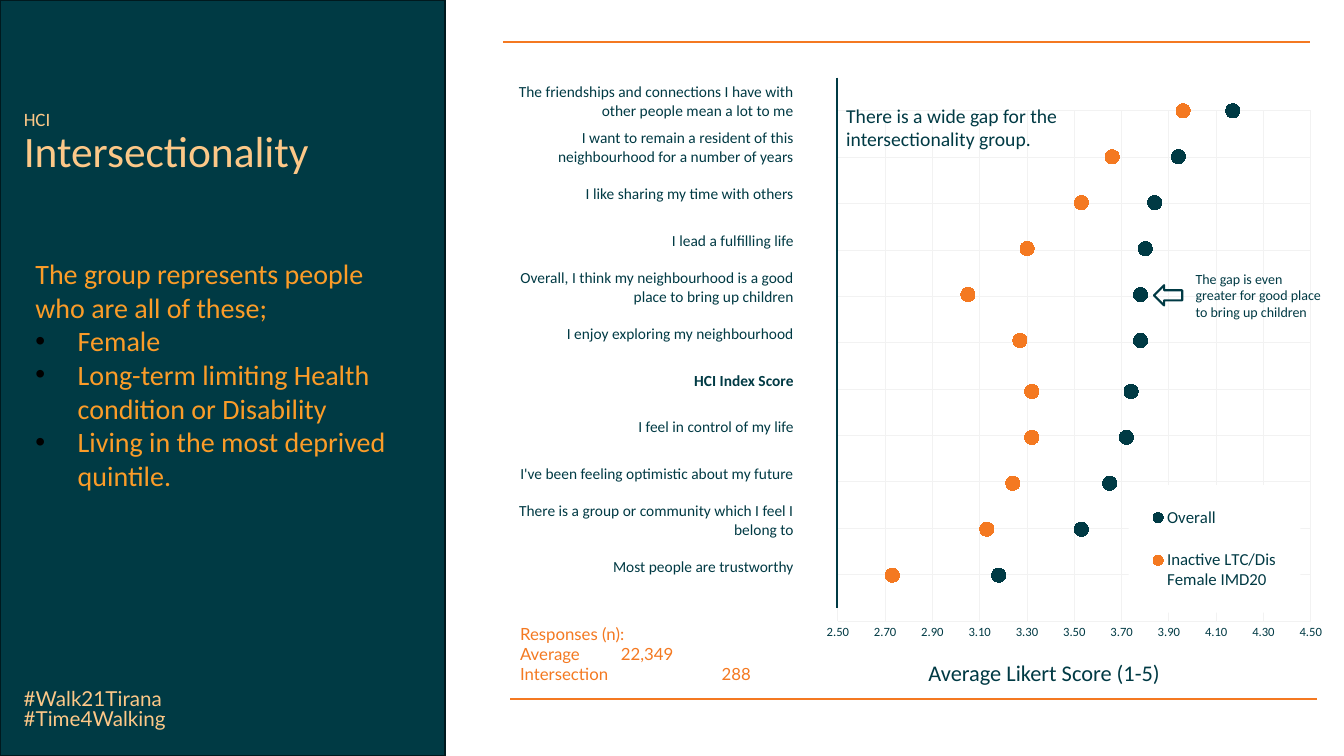
import lxml.etree
import pptx
import pptx.chart.data
import pptx.dml.color
import pptx.enum.chart
import pptx.enum.shapes
import pptx.enum.text
import pptx.oxml.ns
import pptx.util

# Content: statement, overall score, intersection score
SCORES = [
    ("The friendships and connections I have with other people mean a lot to me", 4.17, 3.96),
    ("I want to remain a resident of this neighbourhood for a number of years", 3.94, 3.66),
    ("I like sharing my time with others", 3.84, 3.53),
    ("I lead a fulfilling life", 3.80, 3.30),
    ("Overall, I think my neighbourhood is a good place to bring up children", 3.78, 3.05),
    ("I enjoy exploring my neighbourhood", 3.78, 3.27),
    ("HCI Index Score", 3.74, 3.32),
    ("I feel in control of my life", 3.72, 3.32),
    ("I've been feeling optimistic about my future", 3.65, 3.24),
    ("There is a group or community which I feel I belong to", 3.53, 3.13),
    ("Most people are trustworthy", 3.18, 2.73),
]
INDEX_ROW = "HCI Index Score"
SERIES = [("Overall", "dark"), ("Inactive LTC/Dis Female IMD20", "orange")]
GROUP_LEAD = "The group represents people who are all of these;"
GROUP = ["Female", "Long-term limiting Health condition or Disability",
         "Living in the most deprived quintile."]
# Each response line with its tab stop in inches
RESPONSES = [("Responses (n):", None), ("Average\t22,349", 1), ("Intersection\t288", 2)]
HASHTAGS = ["#Walk21Tirana", "#Time4Walking"]
WIDE_GAP = "There is a wide gap for the intersectionality group."
CHILD_GAP = "The gap is even greater for good place to bring up children"


class Theme:
    colors = dict(dark="003A44", edge="00191E", orange="F47921", amber="FB9C28",
                  peach="FDC888", grid="F2F2F2", white="FFFFFF", black="000000")
    sizes = dict(title=31, kicker=13.5, body=20, hashtag=14.7, caption=16,
                 note=14, legend=12, row=11, small=10, tick=9)
    font, alternate = "Calibri", "Lato"


# Places in percent of the slide: left, top, width, height
PLACES = dict(
    panel=(0, 0, 33.12, 100), title=(1.02, 10.27, 29.25, 17.47),
    body=(1.88, 33.27, 27.76, 50.8), hashtags=(0.79, 90.45, 13.95, 8),
    top_rule=(37.43, 5.6, 60.05, 0), bottom_rule=(37.96, 92.45, 60.05, 0),
    responses=(37.96, 81.87, 20.26, 9.47), chart=(58.81, 7.6, 40.59, 80.27),
    caption=(68.34, 86.53, 29.18, 4.93), table=(36.23, 10.27, 22.9, 67.8),
    spine=(62.27, 10.27, 0, 70.13), wide_gap=(62.22, 13.07, 20.93, 7.6),
    child_gap=(88.22, 35.07, 10.95, 10.27), arrow=(85.86, 37.73, 2.1, 2.67),
)
PLOT_SHARE = (0.087, 0.088, 0.867, 0.841)
LEGEND_SHARE = (0.62, 0.705, 0.315, 0.21)

qn = pptx.oxml.ns.qn
Inches, Pt = pptx.util.Inches, pptx.util.Pt
Align = pptx.enum.text.PP_ALIGN
deck = pptx.Presentation()
deck.slide_width, deck.slide_height = Inches(13.33), Inches(7.5)
page = deck.slides.add_slide(deck.slide_layouts[1])


def color(name):
    return pptx.dml.color.RGBColor.from_string(Theme.colors[name])


def place(name):
    sides = (deck.slide_width, deck.slide_height) * 2
    return [round(share * side / 100) for share, side in zip(PLACES[name], sides)]


def child(parent, tag, **attributes):
    return lxml.etree.SubElement(parent, qn(tag), **attributes)


def style(font, size, ink, face=Theme.font, bold=False):
    font.size, font.name, font.bold = Pt(Theme.sizes[size]), face, bold
    font.color.rgb = color(ink)


def write(para, text, size="row", ink="dark", face=Theme.font, bold=False,
          align=Align.LEFT, spacing=None, bullet=None, tab=None):
    """Add a formatted run to a paragraph."""
    properties = para._p.get_or_add_pPr()
    if bullet:
        properties.set("marL", str(Inches(0.42)))
        properties.set("indent", str(-Inches(0.42)))
        child(child(properties, "a:buClr"), "a:srgbClr", val=Theme.colors["black"])
        child(properties, "a:buFont", typeface="Arial")
        child(properties, "a:buChar", char=bullet)
    if tab:
        child(child(properties, "a:tabLst"), "a:tab", pos=str(Inches(tab)), algn="l")
    para.alignment = align
    if spacing:
        para.line_spacing = spacing
    span = para.add_run()
    span.text = text
    style(span.font, size, ink, face, bold)


def next_para(frame, index):
    return frame.paragraphs[0] if index == 0 else frame.add_paragraph()


def text_box(name, lines, margins=(0.1, 0.05), **look):
    frame = page.shapes.add_textbox(*place(name)).text_frame
    frame.word_wrap = True
    frame.margin_left = frame.margin_right = Inches(margins[0])
    frame.margin_top = frame.margin_bottom = Inches(margins[1])
    for index, (text, tab) in enumerate(lines):
        write(next_para(frame, index), text, tab=tab, **look)


def rule(name, ink, width):
    left, top, across, down = place(name)
    line = page.shapes.add_connector(pptx.enum.shapes.MSO_CONNECTOR.STRAIGHT,
                                     left, top, left + across, top + down)
    line.line.color.rgb, line.line.width = color(ink), Pt(width)
    child(line._element.spPr, "a:effectLst")


def outlined(kind, name, ink, fill=None):
    shape = page.shapes.add_shape(kind, *place(name))
    shape.shadow.inherit = False
    if fill:
        shape.fill.solid()
        shape.fill.fore_color.rgb = color(fill)
    else:
        shape.fill.background()
    shape.line.color.rgb, shape.line.width = color(ink), Pt(1.5)
    return shape


def manual_layout(shares, inner=False):
    layout = lxml.etree.Element(qn("c:layout"))
    manual = child(layout, "c:manualLayout")
    if inner:
        child(manual, "c:layoutTarget", val="inner")
    for tag in ("c:xMode", "c:yMode"):
        child(manual, tag, val="edge")
    for tag, share in zip(("c:x", "c:y", "c:w", "c:h"), shares):
        child(manual, tag, val=str(share))
    return layout


def white_after(element):
    properties = lxml.etree.Element(qn("c:spPr"))
    child(child(properties, "a:solidFill"), "a:srgbClr", val=Theme.colors["white"])
    child(child(properties, "a:ln"), "a:noFill")
    element.addnext(properties)


# Dark panel, placed behind the placeholders
panel = outlined(pptx.enum.shapes.MSO_SHAPE.RECTANGLE, "panel", "edge", "dark")
page.shapes._spTree.insert(2, panel._element)

# Title and list placeholders
title, body = page.shapes.title, page.placeholders[1]
for holder, name in ((title, "title"), (body, "body")):
    holder.left, holder.top, holder.width, holder.height = place(name)
    holder.text_frame.auto_size = pptx.enum.text.MSO_AUTO_SIZE.NONE
title.text_frame.vertical_anchor = pptx.enum.text.MSO_ANCHOR.MIDDLE
heading = title.text_frame.paragraphs[0]
write(heading, "HCI ", size="kicker", ink="peach", spacing=0.9)
heading.add_line_break()
write(heading, "Intersectionality", size="title", ink="peach", spacing=0.9)
for index, text in enumerate([GROUP_LEAD] + GROUP):
    para = next_para(body.text_frame, index)
    if index == 0:
        lead = para._p.get_or_add_pPr()
        lead.set("marL", "0")
        lead.set("indent", "0")
        child(lead, "a:buNone")
    write(para, text, size="body", ink="amber", bullet="•" if index else None)
    para.space_before = Pt(0)

# Rules and response counts
rule("top_rule", "orange", 1.5)
rule("bottom_rule", "orange", 1.5)
text_box("responses", RESPONSES, size="legend", ink="orange", face=Theme.alternate)

# Dot chart with one evenly spaced level per statement
step = 100 / len(SCORES)
data = pptx.chart.data.XyChartData()
for column, (label, ink) in enumerate(SERIES, start=1):
    points = data.add_series(label)
    for index, row in enumerate(SCORES):
        points.add_data_point(row[column], round(100 - index * step))
chart = page.shapes.add_chart(pptx.enum.chart.XL_CHART_TYPE.XY_SCATTER,
                              *place("chart"), data).chart
chart.has_title = False
style(chart.font, "small", "dark")
for series, (label, ink) in zip(chart.plots[0].series, SERIES):
    series.format.line.fill.background()
    series.smooth = False
    marker = series.marker
    marker.style, marker.size = pptx.enum.chart.XL_MARKER_STYLE.CIRCLE, 10
    marker.format.fill.solid()
    marker.format.fill.fore_color.rgb = color(ink)
    marker.format.line.color.rgb = color(ink)
score_axis, level_axis = chart.category_axis, chart.value_axis
for axis, low, high, unit in ((score_axis, 2.5, 4.5, 0.2), (level_axis, 0, 100, round(step, 2))):
    axis.minimum_scale, axis.maximum_scale, axis.major_unit = low, high, unit
    axis.has_major_gridlines = True
    axis.major_tick_mark = axis.minor_tick_mark = pptx.enum.chart.XL_TICK_MARK.NONE
    for line in (axis.major_gridlines.format.line, axis.format.line):
        line.color.rgb, line.width = color("grid"), Pt(0.75)
level_axis.visible = False
style(score_axis.tick_labels.font, "tick", "dark")
score_axis.tick_labels.number_format = "0.00"
score_axis.tick_labels.number_format_is_linked = False

# Legend and plot placement
chart.has_legend = True
legend = chart.legend
legend.position = pptx.enum.chart.XL_LEGEND_POSITION.TOP
legend.include_in_layout = True
style(legend.font, "legend", "dark")
for old in legend._element.findall(qn("c:layout")):
    legend._element.remove(old)
legend._element.find(qn("c:legendPos")).addnext(manual_layout(LEGEND_SHARE))
white_after(legend._element.find(qn("c:overlay")))
plot_area = chart._chartSpace.chart.plotArea
for old in plot_area.findall(qn("c:layout")):
    plot_area.remove(old)
plot_area.insert(0, manual_layout(PLOT_SHARE, inner=True))
white_after(chart._chartSpace.chart)
text_box("caption", [("Average Likert Score (1-5)", None)], size="caption")

# Statement table
table = page.shapes.add_table(len(SCORES), 1, *place("table")).table
table.first_row = table.horz_banding = False
for index, (statement, *_) in enumerate(SCORES):
    cell = table.cell(index, 0)
    cell.fill.background()
    cell.margin_left = cell.margin_right = cell.margin_top = Inches(0.01)
    cell.margin_bottom = 0
    cell.vertical_anchor = pptx.enum.text.MSO_ANCHOR.MIDDLE
    write(cell.text_frame.paragraphs[0], statement, align=Align.RIGHT,
          bold=statement == INDEX_ROW)

# Spine, notes and hashtags
rule("spine", "dark", 1)
text_box("wide_gap", [(WIDE_GAP, None)], size="note")
text_box("child_gap", [(CHILD_GAP, None)], size="small")
outlined(pptx.enum.shapes.MSO_SHAPE.RIGHT_ARROW, "arrow", "dark").rotation = 180
text_box("hashtags", [(tag, None) for tag in HASHTAGS], margins=(0.13, 0.07),
         size="hashtag", ink="peach", face=Theme.alternate, spacing=0.8)

deck.save("out.pptx")
